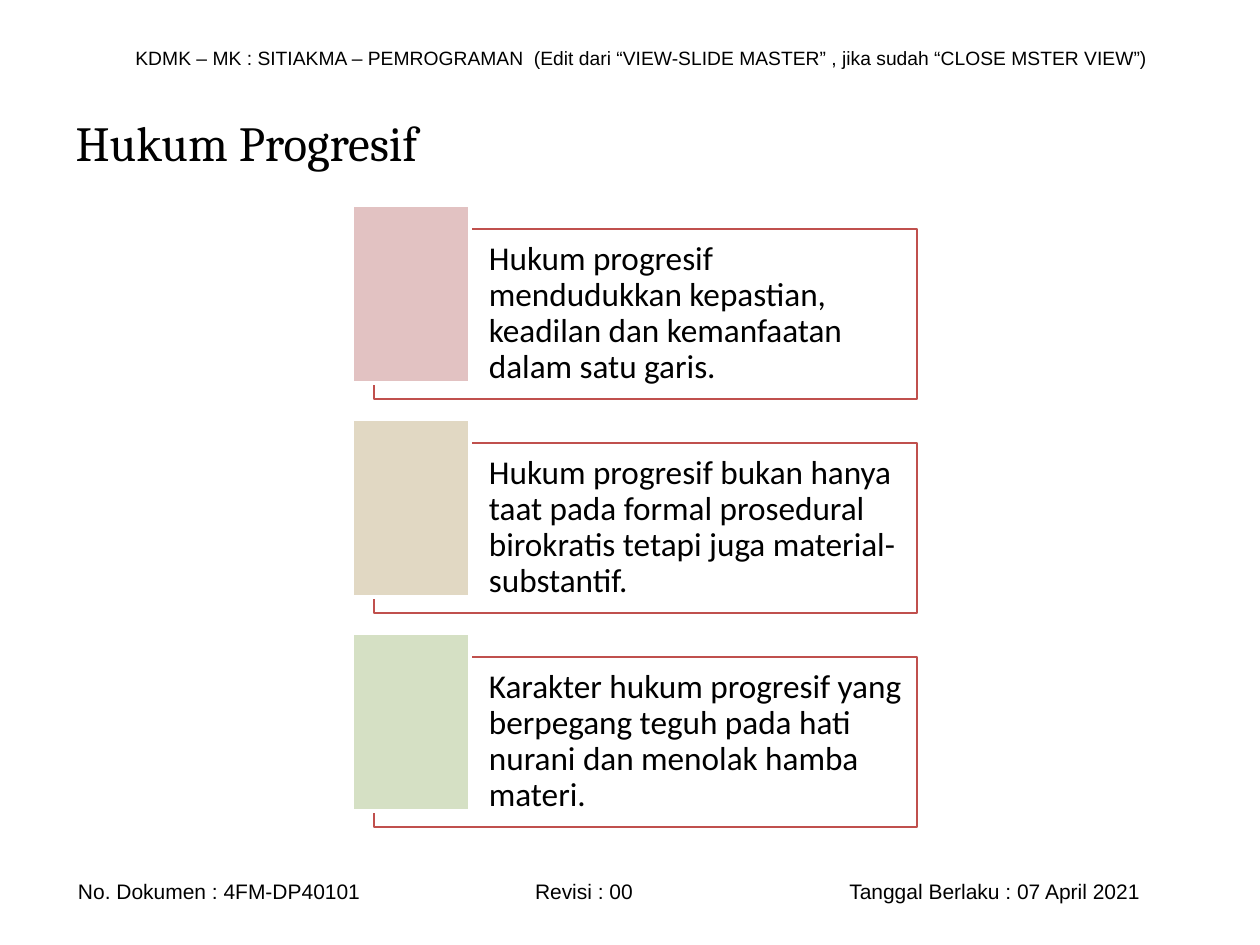
import pptx
import pptx.util
import pptx.dml.color
import pptx.enum.shapes
import pptx.enum.text
import pptx.oxml
import pptx.oxml.ns

HEADER = ("KDMK – MK : SITIAKMA – PEMROGRAMAN  (Edit dari “VIEW-SLIDE MASTER” , "
          "jika sudah “CLOSE MSTER VIEW”)")
FOOTER = ["No. Dokumen : 4FM-DP40101", "Revisi : 00",
          "Tanggal Berlaku : 07 April 2021"]
TITLE = "Hukum Progresif"
CARDS = [
    ("Hukum progresif mendudukkan kepastian, keadilan dan kemanfaatan "
     "dalam satu garis.", "E2C2C2"),
    ("Hukum progresif bukan hanya taat pada formal prosedural birokratis "
     "tetapi juga material-substantif.", "E1D8C3"),
    ("Karakter hukum progresif yang berpegang teguh pada hati nurani dan "
     "menolak hamba materi.", "D5E0C4"),
]
THEME = {
    "ink": "000000", "paper": "FFFFFF", "border": "C0504D",
    "header": ("Arial", 11), "footer": ("Arial", 12),
    "title": ("Cambria", 28), "card": ("Calibri", 19),
}

EMU_PER_PX = 914400 / 126
HEADER_BOX = (123, 39, 1052, 37)
FOOTER_BOX = (25, 872, 1216, 38)
FOOTER_INSET = 53
FOOTER_TABS = [(457, "l"), (1062, "r")]
TITLE_BOX = (63, 106, 384, 72)
CARD_BOX = (374, 229, 543, 170)
ACCENT_BOX = (352, 205, 118, 178)
CARD_PITCH = 214

ALIGN = pptx.enum.text.PP_ALIGN
ANCHOR = pptx.enum.text.MSO_ANCHOR


def px(length):
    return pptx.util.Emu(round(length * EMU_PER_PX))


def color(name):
    return pptx.dml.color.RGBColor.from_string(THEME.get(name, name))


def write(frame, text, style, align=ALIGN.LEFT, tabs=(), **frame_format):
    """Fill a text frame with one paragraph in a theme style."""
    for key, value in frame_format.items():
        setattr(frame, key, value)
    paragraph = frame.paragraphs[0]
    paragraph.text = text
    paragraph.alignment = align
    if tabs:
        properties = paragraph._p.get_or_add_pPr()
        tab_list = pptx.oxml.ns.qn("a:tabLst")
        tab_list = properties.makeelement(tab_list, {})
        for position, kind in tabs:
            tab_list.append(properties.makeelement(
                pptx.oxml.ns.qn("a:tab"), {"pos": str(px(position)), "algn": kind}))
        properties.append(tab_list)
    family, size = THEME[style]
    for run in paragraph.runs:
        run.font.name = family
        run.font.size = pptx.util.Pt(size)
        run.font.color.rgb = color("ink")
    return paragraph


def add_rectangle(slide, box, fill, line, line_width):
    rectangle = slide.shapes.add_shape(
        pptx.enum.shapes.MSO_SHAPE.RECTANGLE, *map(px, box))
    rectangle.shadow.inherit = False
    rectangle.fill.solid()
    rectangle.fill.fore_color.rgb = color(fill)
    rectangle.line.color.rgb = color(line)
    rectangle.line.width = pptx.util.Pt(line_width)
    return rectangle


def set_opacity(shape, percent):
    fill_color = shape._element.spPr.find(
        pptx.oxml.ns.qn("a:solidFill")).find(pptx.oxml.ns.qn("a:srgbClr"))
    fill_color.append(fill_color.makeelement(
        pptx.oxml.ns.qn("a:alpha"), {"val": str(percent * 1000)}))


def add_card(slide, index, text, accent):
    def shifted(box):
        left, top, width, height = box
        return left, top + index * CARD_PITCH, width, height

    card = add_rectangle(slide, shifted(CARD_BOX), "paper", "border", 0.75)
    set_opacity(card, 40)
    paragraph = write(
        card.text_frame, text, "card", word_wrap=True,
        vertical_anchor=ANCHOR.MIDDLE, margin_left=px(115), margin_right=px(10),
        margin_top=px(10), margin_bottom=px(10))
    paragraph.line_spacing = 0.9
    add_rectangle(slide, shifted(ACCENT_BOX), accent, "paper", 2)


def main():
    deck = pptx.Presentation()
    deck.slide_width, deck.slide_height = px(1260), px(945)
    slide = deck.slides.add_slide(deck.slide_layouts.get_by_name("Title Only"))

    header = slide.shapes.add_textbox(*map(px, HEADER_BOX))
    write(header.text_frame, HEADER, "header", word_wrap=True,
          vertical_anchor=ANCHOR.MIDDLE)
    footer = slide.shapes.add_textbox(*map(px, FOOTER_BOX))
    write(footer.text_frame, "\t".join(FOOTER), "footer", tabs=FOOTER_TABS,
          word_wrap=True, vertical_anchor=ANCHOR.MIDDLE,
          margin_left=px(FOOTER_INSET))

    title = slide.shapes.title
    for side, value in zip(("left", "top", "width", "height"), TITLE_BOX):
        setattr(title, side, px(value))
    write(title.text_frame, TITLE, "title", word_wrap=False,
          vertical_anchor=ANCHOR.TOP,
          auto_size=pptx.enum.text.MSO_AUTO_SIZE.NONE)

    for index, (text, accent) in enumerate(CARDS):
        add_card(slide, index, text, accent)
    deck.save("out.pptx")


if __name__ == "__main__":
    main()
